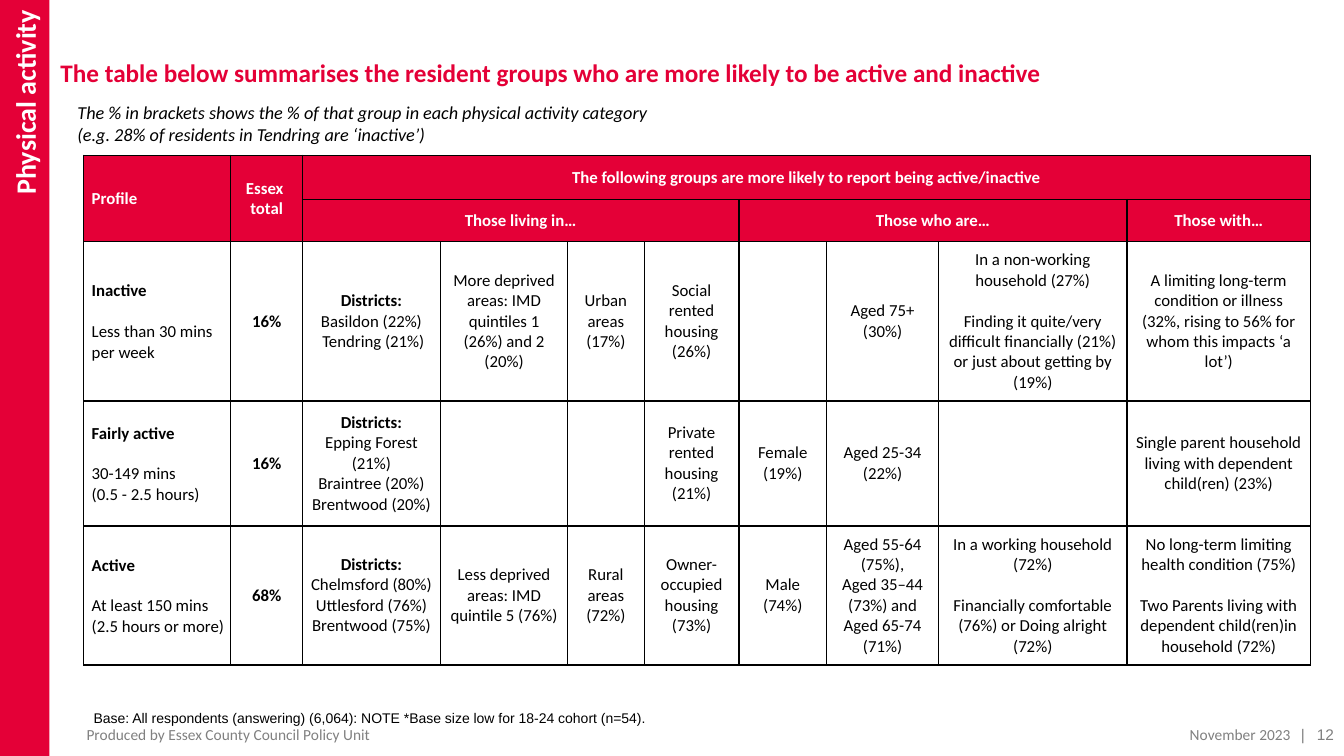
import pptx
import pptx.dml.color
import pptx.enum.shapes
import pptx.enum.text
import pptx.oxml
import pptx.oxml.ns
import pptx.util

Inches = pptx.util.Inches
Pt = pptx.util.Pt
RGBColor = pptx.dml.color.RGBColor
ALIGN = pptx.enum.text.PP_ALIGN
ANCHOR = pptx.enum.text.MSO_ANCHOR

RED = RGBColor(0xE4, 0x00, 0x37)
WHITE = RGBColor(0xFF, 0xFF, 0xFF)
BLACK = RGBColor(0x00, 0x00, 0x00)
GREY = RGBColor(0x80, 0x80, 0x80)

COLUMN_WIDTHS = [1.46, 0.71, 1.37, 1.26, 0.76, 0.94, 0.87, 1.11, 1.87, 1.82]
ROW_HEIGHTS = [0.44, 0.39, 1.43, 1.24, 1.18]
HEADER_ROWS = 2
PROFILE, TOTAL, DISTRICTS = 0, 1, 2
BODY_INSETS = (0.08, 0.08, 0.08, 0.08)
HEADER_INSETS = (0.08, 0.01, 0.08, 0)
COLUMN_INSETS = {PROFILE: (0.08, 0.01, 0.04, 0), TOTAL: (0.01, 0.01, 0.01, 0)}

# row, column, row span, column span, text
HEADERS = [
    (0, PROFILE, 2, 1, "Profile"),
    (0, TOTAL, 2, 1, "Essex \ntotal"),
    (0, 2, 1, 8, "The following groups are more likely to report being active/inactive"),
    (1, 2, 1, 4, "Those living in…"),
    (1, 6, 1, 3, "Those who are…"),
    (1, 9, 1, 1, "Those with…"),
]

# A line feed starts a paragraph; a double one also leaves a gap
PROFILES = [
    ["Inactive\n\nLess than 30 mins per week", "16%",
     "Districts:\nBasildon (22%)\n Tendring (21%)",
     "More deprived areas: IMD quintiles 1 (26%) and 2 (20%)",
     "Urban areas (17%)", "Social rented housing (26%)", "", "Aged 75+ (30%)",
     "In a non-working household (27%)\n\nFinding it quite/very difficult "
     "financially (21%) or just about getting by (19%)",
     "A limiting long-term condition or illness (32%, rising to 56% for whom "
     "this impacts ‘a lot’)"],
    ["Fairly active\n\n30-149 mins\n(0.5 - 2.5 hours)", "16%",
     "Districts:\nEpping Forest (21%)\nBraintree (20%)\nBrentwood (20%)",
     "", "", "Private rented housing (21%)", "Female (19%)", "Aged 25-34 (22%)", "",
     "Single parent household living with dependent child(ren) (23%)"],
    ["Active\n\nAt least 150 mins\n(2.5 hours or more)", "68%",
     "Districts:\nChelmsford (80%)\nUttlesford (76%)\nBrentwood (75%)",
     "Less deprived areas: IMD quintile 5 (76%)", "Rural areas (72%)",
     "Owner-occupied housing (73%)", "Male (74%)",
     "Aged 55-64 (75%),\nAged 35–44 (73%) and Aged 65-74 (71%)",
     "In a working household (72%)\n\nFinancially comfortable (76%) or Doing "
     "alright (72%)",
     "No long-term limiting health condition (75%)\n\nTwo Parents living with "
     "dependent child(ren)in household (72%)"],
]


class SlideBuilder:
    font = "Calibri"
    table_size = 12
    gap = Pt(14.6)

    def __init__(self, slide):
        self.slide = slide

    def add_lines(self, frame, text, size, color, bold=False, italic=False,
                  align=ALIGN.LEFT, font=None, bold_first=False):
        gap_before = False
        for number, line in enumerate(text.split("\n")):
            if not line:
                gap_before = True
                continue
            paragraph = frame.paragraphs[0] if number == 0 else frame.add_paragraph()
            paragraph.alignment = align
            if gap_before:
                paragraph.space_before = self.gap
                gap_before = False
            run = paragraph.add_run()
            run.text = line
            run.font.name = font or self.font
            run.font.size = Pt(size)
            run.font.bold = bold or (bold_first and number == 0)
            run.font.italic = italic
            run.font.color.rgb = color

    def set_insets(self, target, insets):
        (target.margin_left, target.margin_top,
         target.margin_right, target.margin_bottom) = map(Inches, insets)

    def text(self, box, text, size, color, anchor=ANCHOR.TOP,
             insets=(0.1, 0.05, 0.1, 0.05), **style):
        frame = self.slide.shapes.add_textbox(*map(Inches, box)).text_frame
        frame.word_wrap = True
        frame.vertical_anchor = anchor
        self.set_insets(frame, insets)
        self.add_lines(frame, text, size, color, **style)

    def side_band(self, box, text):
        band = self.slide.shapes.add_shape(
            pptx.enum.shapes.MSO_SHAPE.RECTANGLE, *map(Inches, box))
        band.shadow.inherit = False
        band.fill.solid()
        band.fill.fore_color.rgb = RED
        band.line.fill.background()
        frame = band.text_frame
        frame.word_wrap = True
        frame.vertical_anchor = ANCHOR.MIDDLE
        self.set_insets(frame, (0.1, 0.1, 0.1, 0.05))
        frame._txBody.bodyPr.set("vert", "vert270")
        self.add_lines(frame, text, 20, WHITE, bold=True, align=ALIGN.RIGHT)

    def style_cell(self, cell, fill, insets):
        properties = cell._tc.get_or_add_tcPr()
        for side in ("lnL", "lnR", "lnT", "lnB"):
            properties.append(pptx.oxml.parse_xml(
                f'<a:{side} {pptx.oxml.ns.nsdecls("a")} w="{int(Pt(1))}">'
                f'<a:solidFill><a:srgbClr val="{BLACK}"/></a:solidFill></a:{side}>'))
        if fill is None:
            cell.fill.background()
        else:
            cell.fill.solid()
            cell.fill.fore_color.rgb = fill
        cell.vertical_anchor = ANCHOR.MIDDLE
        self.set_insets(cell, insets)

    def profile_table(self, left, top):
        table = self.slide.shapes.add_table(
            len(ROW_HEIGHTS), len(COLUMN_WIDTHS), Inches(left), Inches(top),
            Inches(sum(COLUMN_WIDTHS)), Inches(sum(ROW_HEIGHTS))).table
        table.first_row = table.horz_banding = False
        for column, width in zip(table.columns, COLUMN_WIDTHS):
            column.width = Inches(width)
        for row, height in zip(table.rows, ROW_HEIGHTS):
            row.height = Inches(height)

        # Header cells
        for row in range(HEADER_ROWS):
            for column in range(len(COLUMN_WIDTHS)):
                self.style_cell(table.cell(row, column), RED, HEADER_INSETS)
        for row, column, row_span, column_span, text in HEADERS:
            cell = table.cell(row, column)
            if row_span * column_span > 1:
                cell.merge(table.cell(row + row_span - 1, column + column_span - 1))
            self.add_lines(cell.text_frame, text, self.table_size, WHITE, bold=True,
                           align=ALIGN.LEFT if column == PROFILE else ALIGN.CENTER)

        # One row per activity profile
        for row, profile in enumerate(PROFILES, HEADER_ROWS):
            for column, text in enumerate(profile):
                cell = table.cell(row, column)
                self.style_cell(cell, None, COLUMN_INSETS.get(column, BODY_INSETS))
                self.add_lines(cell.text_frame, text, self.table_size, BLACK,
                               bold=column == TOTAL,
                               bold_first=column in (PROFILE, DISTRICTS),
                               align=ALIGN.LEFT if column == PROFILE else ALIGN.CENTER)


def main():
    deck = pptx.Presentation()
    deck.slide_width, deck.slide_height = Inches(13.33), Inches(7.5)
    builder = SlideBuilder(deck.slides.add_slide(deck.slide_layouts[6]))

    # Table and section band
    builder.profile_table(0.83, 1.54)
    builder.side_band((0, 0, 0.49, 7.5), "Physical activity")

    # Title and explanation
    builder.text((0.6, 0.57, 12.39, 0.35),
                 "The table below summarises the resident groups who are more likely "
                 "to be active and inactive",
                 18, RED, insets=(0, 0, 0, 0), bold=True)
    builder.text((0.67, 0.96, 11.66, 0.54),
                 "The % in brackets shows the % of that group in each physical "
                 "activity category\n"
                 "(e.g. 28% of residents in Tendring are ‘inactive’)",
                 13, BLACK, italic=True)

    # Base note
    builder.text((0.83, 6.99, 7.77, 0.27),
                 "Base: All respondents (answering) (6,064): NOTE *Base size low for "
                 "18-24 cohort (n=54).", 10, BLACK, font="Arial")

    # Footer
    footer = {"size": 11, "color": GREY, "anchor": ANCHOR.MIDDLE}
    builder.text((0.76, 7.21, 6.45, 0.15),
                 "Produced by Essex County Council Policy Unit", **footer)
    builder.text((10.5, 7.21, 2.4, 0.15), "November 2023", align=ALIGN.RIGHT, **footer)
    for left, text in ((12.19, "|"), (12.48, "12")):
        builder.text((left, 7.21, 0.85, 0.15), text, align=ALIGN.RIGHT,
                     font="Arial", **footer)

    deck.save("out.pptx")


if __name__ == "__main__":
    main()
